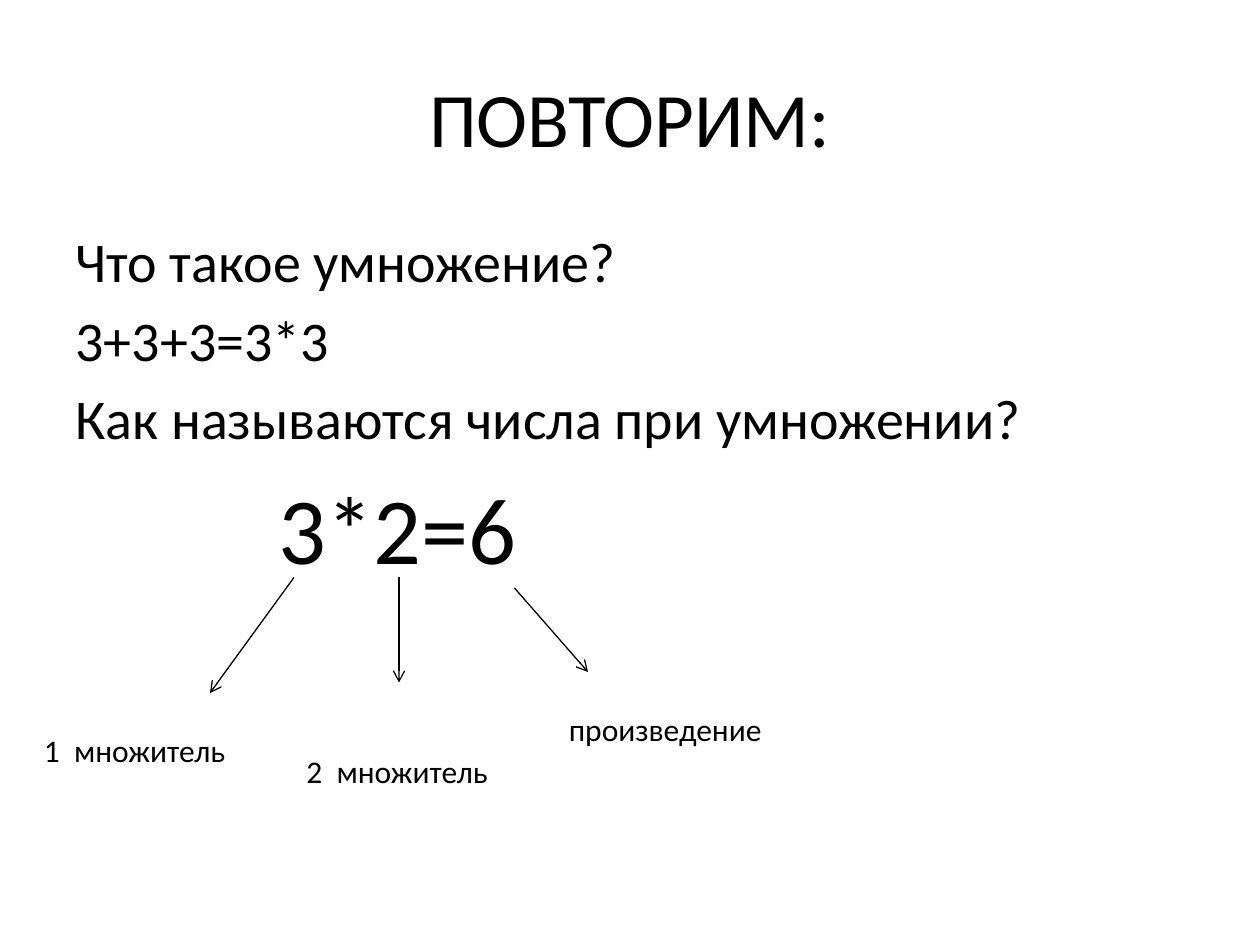
from dataclasses import dataclass

from lxml import etree
from pptx import Presentation
from pptx.dml.color import RGBColor
from pptx.enum.shapes import MSO_CONNECTOR
from pptx.enum.text import MSO_ANCHOR, MSO_AUTO_SIZE, PP_ALIGN
from pptx.oxml.ns import qn
from pptx.util import Pt

STRAIGHT = MSO_CONNECTOR.STRAIGHT
MIDDLE = MSO_ANCHOR.MIDDLE
CENTER = PP_ALIGN.CENTER
NO_AUTOFIT = MSO_AUTO_SIZE.NONE
TITLE_AND_CONTENT = 1


@dataclass(frozen=True)
class Theme:
    font: str = "Calibri"
    ink: RGBColor = RGBColor(0, 0, 0)
    title_size: int = 44
    body_size: int = 32
    formula_size: int = 54
    label_size: int = 18
    line_width: float = 0.75


THEME = Theme()
QUESTIONS = [
    "Что такое умножение?",
    "3+3+3=3*3",
    "Как называются числа при умножении?",
]
FORMULA = "3*2=6"
FORMULA_INDENT = 116
ARROWS = [
    ((108, 0), (108, 60)),
    ((48, 0), (0, 66)),
    ((174, 6), (216, 54)),
]
LABELS = [
    ("1  множитель", -102, 84, 120),
    ("2  множитель", 48, 96, 120),
    ("произведение", 198, 72, 144),
]


def place(shape, left, top, width, height):
    shape.left, shape.top = Pt(left), Pt(top)
    shape.width, shape.height = Pt(width), Pt(height)


def format_font(paragraph, size):
    paragraph.font.name = THEME.font
    paragraph.font.size = Pt(size)
    paragraph.font.color.rgb = THEME.ink


def add_title(slide, text, box):
    title = slide.shapes.title
    place(title, *box)
    title.text_frame.text = text
    title.text_frame.vertical_anchor = MIDDLE
    paragraph = title.text_frame.paragraphs[0]
    paragraph.alignment = CENTER
    format_font(paragraph, THEME.title_size)


def add_questions(slide, box):
    body = slide.placeholders[1]
    place(body, *box)
    frame = body.text_frame
    frame.auto_size = NO_AUTOFIT
    frame.text = "\n".join([*QUESTIONS, FORMULA])
    for paragraph in frame.paragraphs:
        is_formula = paragraph.text == FORMULA
        size = THEME.formula_size if is_formula else THEME.body_size
        properties = paragraph._p.get_or_add_pPr()
        properties.set("marL", str(Pt(FORMULA_INDENT if is_formula else 0)))
        properties.set("indent", "0")
        etree.SubElement(properties, qn("a:buNone"))
        format_font(paragraph, size)
        paragraph.space_before = Pt(0.2 * size)
    frame.paragraphs[0].space_before = Pt(0)


def add_arrow(slide, start, end):
    arrow = slide.shapes.add_connector(STRAIGHT, *map(Pt, (*start, *end)))
    arrow.line.color.rgb = THEME.ink
    arrow.line.width = Pt(THEME.line_width)
    etree.SubElement(arrow.line._get_or_add_ln(), qn("a:tailEnd"), type="arrow")
    etree.SubElement(arrow._element.spPr, qn("a:effectLst"))


def add_label(slide, text, left, top, width):
    label = slide.shapes.add_textbox(Pt(left), Pt(top), Pt(width), Pt(29))
    frame = label.text_frame
    frame.word_wrap = True
    frame.text = text
    format_font(frame.paragraphs[0], THEME.label_size)


def add_term_names(slide, left, top):
    for start, end in ARROWS:
        add_arrow(slide, *((left + x, top + y) for x, y in (start, end)))
    for text, x, y, width in LABELS:
        add_label(slide, text, left + x, top + y, width)


def main():
    presentation = Presentation()
    presentation.slide_width, presentation.slide_height = Pt(720), Pt(540)
    layout = presentation.slide_layouts[TITLE_AND_CONTENT]
    slide = presentation.slides.add_slide(layout)
    add_title(slide, "ПОВТОРИМ:", (36, 21.6, 648, 90))
    add_questions(slide, (36, 126, 648, 356.4))
    add_term_names(slide, 120, 330)
    presentation.save("out.pptx")


if __name__ == "__main__":
    main()
